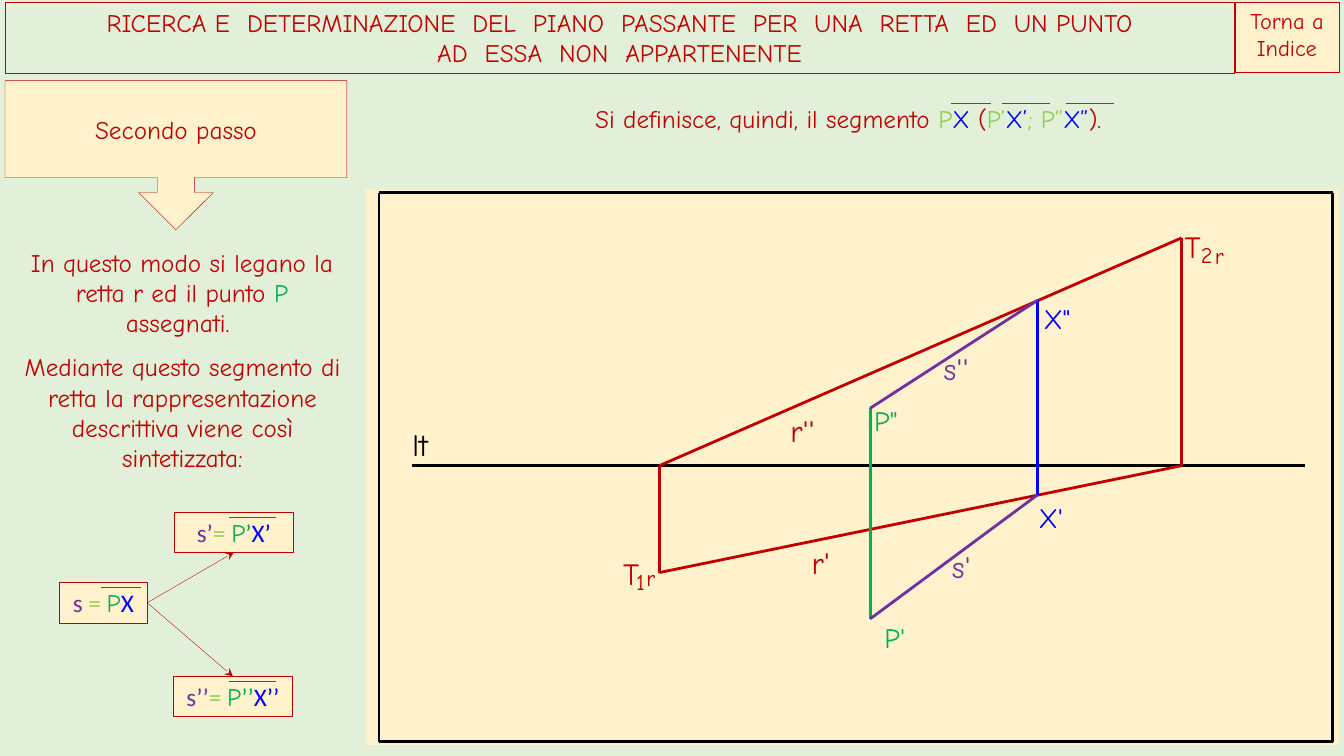
from itertools import pairwise

from lxml.etree import SubElement
from pptx import Presentation
from pptx.dml.color import RGBColor
from pptx.enum.shapes import MSO_CONNECTOR, MSO_SHAPE
from pptx.enum.text import MSO_ANCHOR, MSO_AUTO_SIZE, PP_ALIGN
from pptx.oxml.ns import qn
from pptx.util import Inches, Pt

MINT = RGBColor(0xE2, 0xF0, 0xD9)
CREAM = RGBColor(0xFF, 0xF2, 0xCC)
RED = RGBColor(0xC0, 0x00, 0x00)
GREEN = RGBColor(0x00, 0xB0, 0x50)
LIME = RGBColor(0x92, 0xD0, 0x50)
BLUE = RGBColor(0x00, 0x00, 0xFF)
PURPLE = RGBColor(0x70, 0x30, 0xA0)
BLACK = RGBColor(0x00, 0x00, 0x00)
COMIC, CALIBRI = "Comic Neue", "Calibri"

# Points of the projection drawing
GROUND_Y = 4.62
T1, T1_GROUND = (6.54, 5.68), (6.54, GROUND_Y)
T2, T2_GROUND = (11.72, 2.36), (11.72, GROUND_Y)
P1, P2 = (8.63, 6.14), (8.63, 4.05)
X1, X2 = (10.29, 4.91), (10.29, 2.98)
FRAME = [(3.76, 7.36), (13.22, 7.36), (13.22, 1.91), (3.76, 1.91), (3.76, 7.36)]

LABELS = [
    ("lt", 4.09, 4.22, 0.32, 0.51, 22, BLACK),
    ("P'", 8.77, 6.16, 0.25, 0.34, 20, GREEN),
    ('P"', 8.67, 4.0, 0.26, 0.34, 20, GREEN),
    ('X"', 10.35, 2.99, 0.32, 0.34, 20, BLUE),
    ("X'", 10.3, 4.97, 0.31, 0.34, 20, BLUE),
    ("T", 11.75, 2.26, 0.21, 0.37, 22, RED),
    ("2", 11.91, 2.39, 0.14, 0.27, 16, RED),
    ("r", 12.05, 2.4, 0.11, 0.27, 16, RED),
    ("T", 6.18, 5.5, 0.21, 0.37, 22, RED),
    ("1", 6.31, 5.64, 0.1, 0.27, 16, RED),
    ("r", 6.41, 5.6, 0.11, 0.27, 16, RED),
    ("r'", 8.05, 5.39, 0.27, 0.37, 22, RED),
    ("r''", 7.84, 4.08, 0.39, 0.24, 22, RED),
    ("s''", 9.36, 3.47, 0.39, 0.37, 22, PURPLE),
    ("s'", 9.44, 5.43, 0.27, 0.37, 22, PURPLE),
]

DRAWING_LINES = [
    ((4.09, GROUND_Y), (12.94, GROUND_Y), BLACK),
    (T1_GROUND, T1, RED),
    (T2, T2_GROUND, RED),
    (T1_GROUND, T2, RED),
    (T2_GROUND, T1, RED),
    (P2, P1, GREEN),
    (X2, X1, BLUE),
    (X2, P2, PURPLE),
    (X1, P1, PURPLE),
]

# Box place, prime marks, left and right end of the overline
SEGMENTS = [
    (0.59, 5.78, 0.87, "", 1.0, 1.4),
    (1.72, 6.71, 1.18, "’’", 2.27, 2.74),
    (1.73, 5.08, 1.18, "’", 2.27, 2.74),
]


def write(shape, paragraphs, size=18, align=PP_ALIGN.CENTER, **frame_format):
    """Fill a shape with paragraphs, each a list of (text, colour, font) runs."""
    tf = shape.text_frame
    settings = {"word_wrap": True, "auto_size": MSO_AUTO_SIZE.NONE,
                "vertical_anchor": MSO_ANCHOR.TOP, **frame_format}
    for name, value in settings.items():
        setattr(tf, name, value)
    for i, runs in enumerate(paragraphs):
        p = tf.add_paragraph() if i else tf.paragraphs[0]
        for name, value in {"alignment": align, "line_spacing": 1.0}.items():
            setattr(p, name, value)
        for text, color, font in runs:
            r = p.add_run()
            r.text = text
            for name, value in {"size": Pt(size), "name": font, "bold": False}.items():
                setattr(r.font, name, value)
            r.font.color.rgb = color


def place(shape, *box):
    for name, value in zip(("left", "top", "width", "height"), box):
        setattr(shape, name, Inches(value))


def outline(shape, color, width=0.25):
    shape.line.color.rgb = color
    shape.line.width = Pt(width)


def add_box(s, *box, border=None, kind=MSO_SHAPE.RECTANGLE):
    sp = s.shapes.add_shape(kind, *map(Inches, box))
    sp.shadow.inherit = False
    sp.fill.solid()
    sp.fill.fore_color.rgb = CREAM
    if border is None:
        sp.line.fill.background()
    else:
        outline(sp, border)
    return sp


def add_text(s, *box, runs):
    write(s.shapes.add_textbox(*map(Inches, box)), [runs])


def add_line(s, start, end, color, width=0, arrow=False):
    line = s.shapes.add_connector(MSO_CONNECTOR.STRAIGHT, *map(Inches, start + end))
    outline(line, color, width)
    if arrow:
        SubElement(line.line._get_or_add_ln(), qn("a:tailEnd"), type="stealth")
    SubElement(line._element.spPr, qn("a:effectLst"))


def add_label(s, text, x, y, w, h, size, color):
    margins = {f"margin_{side}": 0 for side in ("left", "top", "right", "bottom")}
    write(add_box(s, x, y, w, h), [[(text, color, COMIC)]], size, PP_ALIGN.LEFT,
          word_wrap=False, **margins)


def add_header(s):
    title = s.shapes.title
    place(title, 0.05, 0.02, 12.19, 0.71)
    outline(title, RED)
    lines = ["RICERCA E  DETERMINAZIONE  DEL  PIANO  PASSANTE  PER  UNA  RETTA  ED  UN PUNTO",
             "AD  ESSA  NON  APPARTENENTE"]
    write(title, [[(line, RED, COMIC)] for line in lines])
    index = add_box(s, 12.25, 0.02, 1.03, 0.7, border=RED)
    write(index, [[("Torna a Indice", RED, COMIC)]], 16)


def add_explanation(s):
    step = add_box(s, 0.05, 0.8, 3.39, 1.48, border=RED, kind=MSO_SHAPE.DOWN_ARROW_CALLOUT)
    write(step, [[("Secondo passo", RED, COMIC)]], vertical_anchor=MSO_ANCHOR.MIDDLE)
    add_text(s, 0.11, 2.4, 3.39, 1.01, runs=[
        ("In questo modo si legano la retta r ed il punto ", RED, COMIC),
        ("P", GREEN, COMIC), (" assegnati. ", RED, COMIC)])
    add_text(s, 0.05, 3.44, 3.52, 1.31, runs=[
        ("Mediante questo segmento di retta la rappresentazione descrittiva "
         "viene così sintetizzata:", RED, COMIC)])


def add_definition(s):
    parts = [("Si definisce, quindi, il segmento ", RED), ("P", LIME), ("X ", BLUE),
             ("(", RED), ("P’", LIME), ("X’", BLUE), ("; P”", LIME), ("X”", BLUE),
             ("). ", RED)]
    add_text(s, 3.63, 0.98, 9.65, 0.4, runs=[(text, color, COMIC) for text, color in parts])
    for left, right in [(9.43, 9.83), (9.94, 10.41), (10.57, 11.05)]:
        add_line(s, (left, 1.03), (right, 1.03), PURPLE, 0.5)


def add_segment(s, x, y, w, primes, over_left, over_right):
    runs = [("s" + (primes or " "), PURPLE, CALIBRI), ("= ", LIME, CALIBRI),
            ("P", GREEN, COMIC)]
    if primes:
        runs.append((primes, GREEN, CALIBRI))
    runs.append(("X" + primes, BLUE, CALIBRI))
    write(add_box(s, x, y, w, 0.4, border=RED), [runs], vertical_anchor=MSO_ANCHOR.MIDDLE)
    add_line(s, (over_left, y + 0.05), (over_right, y + 0.05), PURPLE, 0.5)


def add_drawing(s):
    add_box(s, 3.63, 1.88, 9.65, 5.51)
    for label in LABELS:
        add_label(s, *label)
    for start, end in pairwise(FRAME):
        add_line(s, start, end, BLACK)
    for line in DRAWING_LINES:
        add_line(s, *line)


def main():
    prs = Presentation()
    prs.slide_width, prs.slide_height = Inches(13.33), Inches(7.5)
    s = prs.slides.add_slide(prs.slide_layouts[5])
    s.background.fill.solid()
    s.background.fill.fore_color.rgb = MINT
    add_header(s)
    add_explanation(s)
    add_definition(s)
    add_drawing(s)
    for tip in [(2.32, 5.48), (2.31, 6.71)]:
        add_line(s, (1.46, 5.98), tip, RED, 0.25, arrow=True)
    for segment in SEGMENTS:
        add_segment(s, *segment)
    prs.save("out.pptx")


if __name__ == "__main__":
    main()
